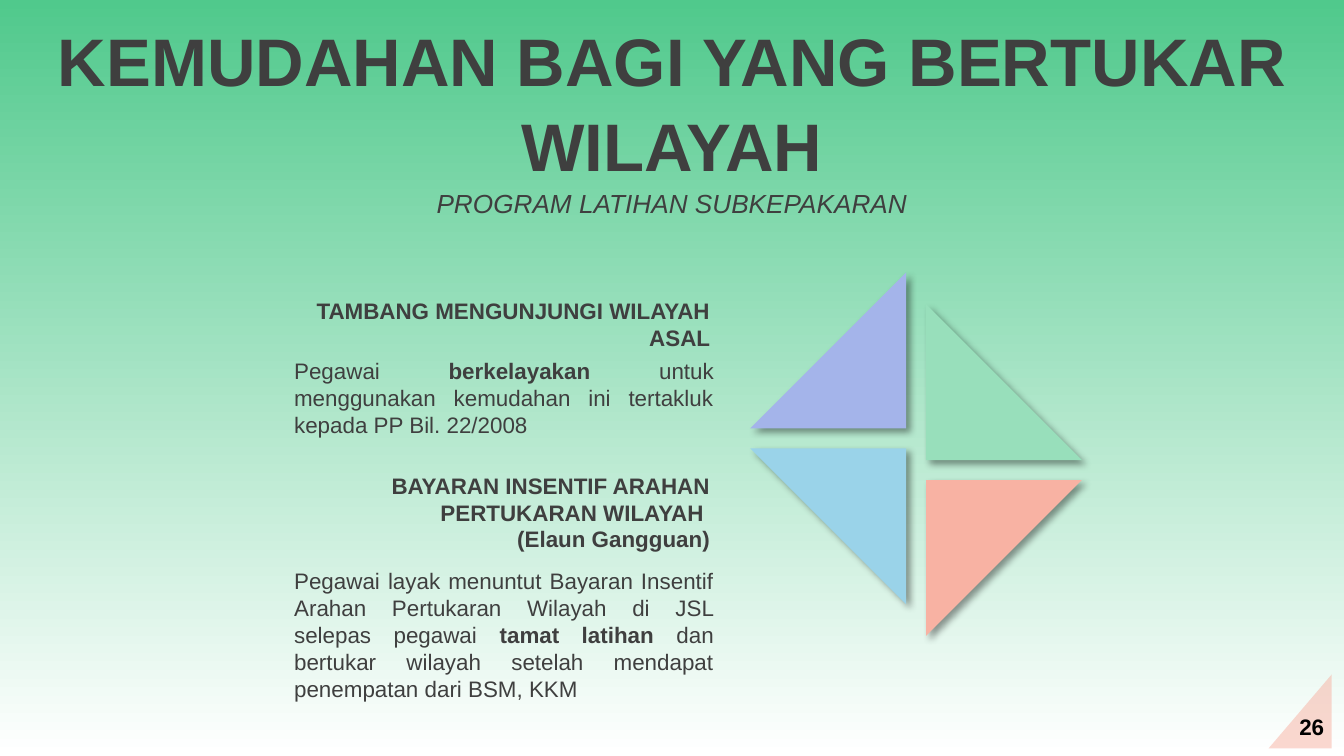
from lxml import etree
from pptx import Presentation
from pptx.dml.color import RGBColor as RGB
from pptx.enum.shapes import MSO_SHAPE as Geo
from pptx.enum.text import MSO_ANCHOR as Anchor, MSO_AUTO_SIZE as Fit, PP_ALIGN as Align
from pptx.oxml import parse_xml
from pptx.oxml.ns import nsdecls, qn
from pptx.util import Pt

HUES = {
    "text": "3F3F3F", "black": "000000", "top": "50C98C", "base": "FFFFFF",
    "green": "98DFBB", "coral": "F8B2A3", "sky": "9AD3E9", "lilac": "A4B4EA",
}
FONT = "Arial"


class Deck:
    def __init__(self, wide, high):
        self.prs = Presentation()
        self.prs.slide_width, self.prs.slide_height = Pt(wide), Pt(high)
        self.slide = self.prs.slides.add_slide(self.prs.slide_layouts[5])

    def hue(self, name):
        return RGB.from_string(HUES[name])

    def back(self, start, end):
        fill = self.slide.background.fill
        fill.gradient()
        fill.gradient_angle = 270
        for stop, name, pos in zip(fill.gradient_stops, (start, end), (0, 1)):
            stop.color.rgb = self.hue(name)
            stop.position = pos

    def put(self, frame, runs, size, align, color="text"):
        """Each run is (text, style): style holds b or i; a None text breaks the line."""
        frame.word_wrap = True
        para = frame.paragraphs[0]
        para.alignment = align
        for text, style in runs:
            if text is None:
                para.add_line_break()
                continue
            run = para.add_run()
            run.text = text
            font = run.font
            font.name, font.size = FONT, Pt(size)
            font.bold, font.italic = "b" in style, "i" in style
            font.color.rgb = self.hue(color)
        return para

    def title(self, box, text, size):
        shape = self.slide.shapes.title
        shape.left, shape.top, shape.width, shape.height = map(Pt, box)
        frame = shape.text_frame
        frame.auto_size = Fit.NONE
        frame.vertical_anchor = Anchor.MIDDLE
        para = self.put(frame, [(text, "b")], size, Align.CENTER)
        para.line_spacing = 1.05

    def text(self, box, runs, align, size=12, color="text", anchor=Anchor.TOP):
        frame = self.slide.shapes.add_textbox(*map(Pt, box)).text_frame
        frame.vertical_anchor = anchor
        self.put(frame, runs, size, align, color)

    def wedge(self, box, color, turn=0):
        shape = self.slide.shapes.add_shape(Geo.RIGHT_TRIANGLE, *map(Pt, box))
        shape.rotation = turn
        shape.shadow.inherit = False
        shape.fill.solid()
        shape.fill.fore_color.rgb = self.hue(color)
        shape.line.fill.background()
        return shape

    def shade(self, shape):
        effects = shape._element.spPr.find(qn("a:effectLst"))
        effects.append(parse_xml(
            f'<a:outerShdw {nsdecls("a")} blurRad="{Pt(4)}" dist="{Pt(3)}" '
            'dir="2700000" algn="tl" rotWithShape="0">'
            f'<a:srgbClr val="{HUES["black"]}"><a:alpha val="40000"/></a:srgbClr>'
            '</a:outerShdw>'))

    def corner(self, box, color, alpha):
        props = self.wedge(box, color)._element.spPr
        props.find(qn("a:xfrm")).set("flipH", "1")
        tint = props.find(qn("a:solidFill")).find(qn("a:srgbClr"))
        etree.SubElement(tint, qn("a:alpha")).set("val", str(alpha * 1000))


def main():
    deck = Deck(720, 405)
    deck.back("top", "base")

    # Heading
    deck.title((0, 31, 720, 45), "KEMUDAHAN BAGI YANG BERTUKAR WILAYAH", 36)
    deck.text((0, 98, 720, 22), [("PROGRAM LATIHAN SUBKEPAKARAN", "i")],
              Align.CENTER, size=14, anchor=Anchor.MIDDLE)

    # Pinwheel: each column holds two triangles, the right one set lower
    side, step = 83.5, 94.2
    left, top, drop = 401.9, 146, 17
    wheel = [("green", 1, 0, 0), ("coral", 1, 1, 90),
             ("sky", 0, 1, 180), ("lilac", 0, 0, 270)]
    for color, col, row, turn in wheel:
        box = (left + col * step, top + row * step + col * drop, side, side)
        deck.shade(deck.wedge(box, color, turn))

    # Travel fare
    deck.text((150.5, 188, 239, 51), [
        ("Pegawai ", ""), ("berkelayakan ", "b"),
        ("untuk menggunakan kemudahan ini tertakluk kepada PP Bil. 22/2008", ""),
    ], Align.JUSTIFY)
    deck.text((150.5, 155.5, 237, 36),
              [("TAMBANG MENGUNJUNGI WILAYAH ASAL", "b")], Align.RIGHT)

    # Incentive payment
    deck.text((150.5, 300.3, 239, 80), [
        ("Pegawai layak menuntut Bayaran Insentif Arahan Pertukaran Wilayah "
         "di JSL selepas pegawai ", ""),
        ("tamat latihan ", "b"),
        ("dan bertukar wilayah setelah mendapat penempatan dari BSM, KKM", ""),
    ], Align.JUSTIFY)
    deck.text((127.5, 249.2, 260, 51), [
        ("BAYARAN INSENTIF ARAHAN PERTUKARAN WILAYAH ", "b"),
        (None, ""), ("(Elaun Gangguan)", "b"),
    ], Align.RIGHT)

    # Page number
    deck.corner((679.7, 361.3, 33.8, 39.6), "coral", 51)
    deck.text((689, 378.7, 28, 21.6), [("26", "b")], Align.LEFT, color="black")

    deck.prs.save("out.pptx")


if __name__ == "__main__":
    main()
